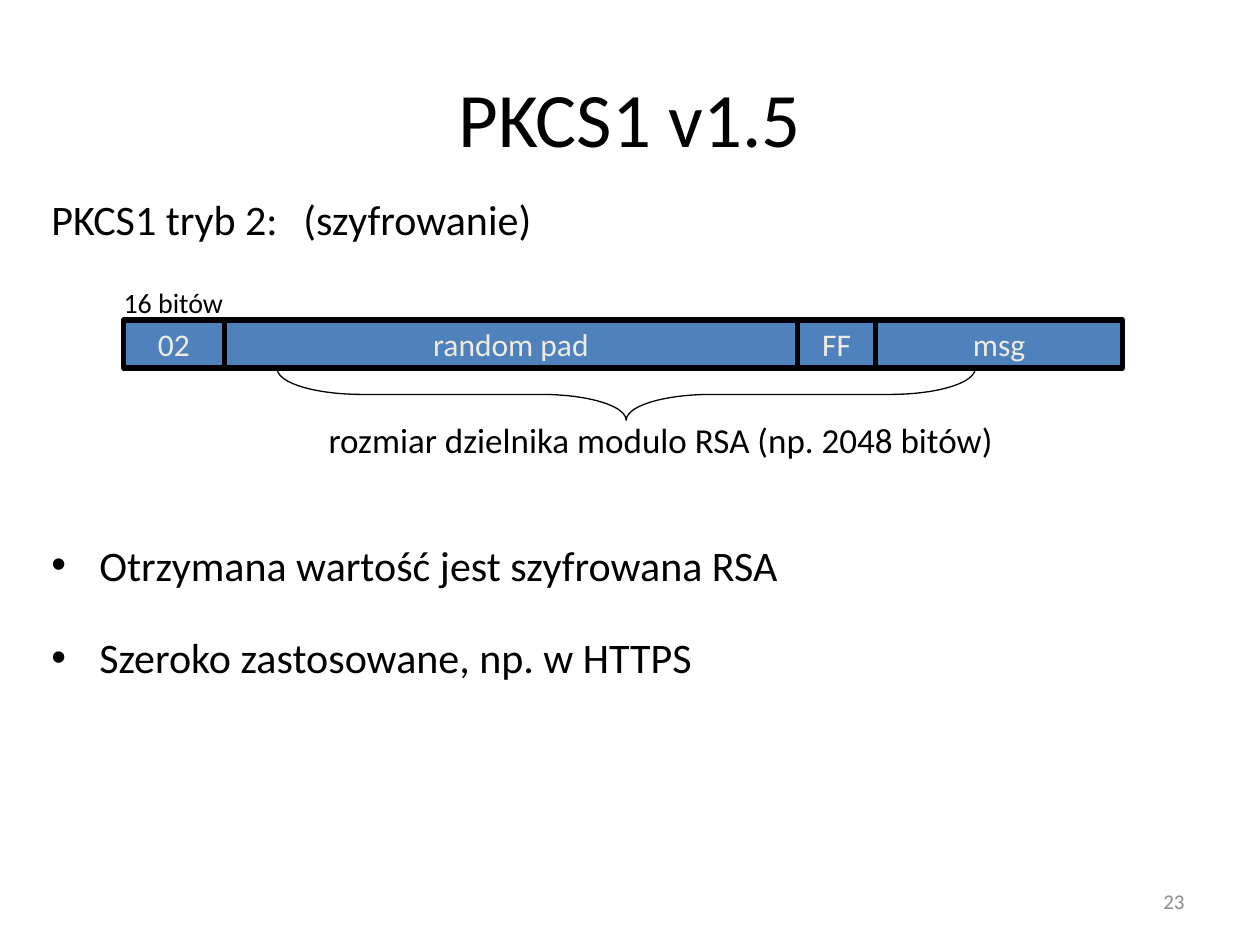
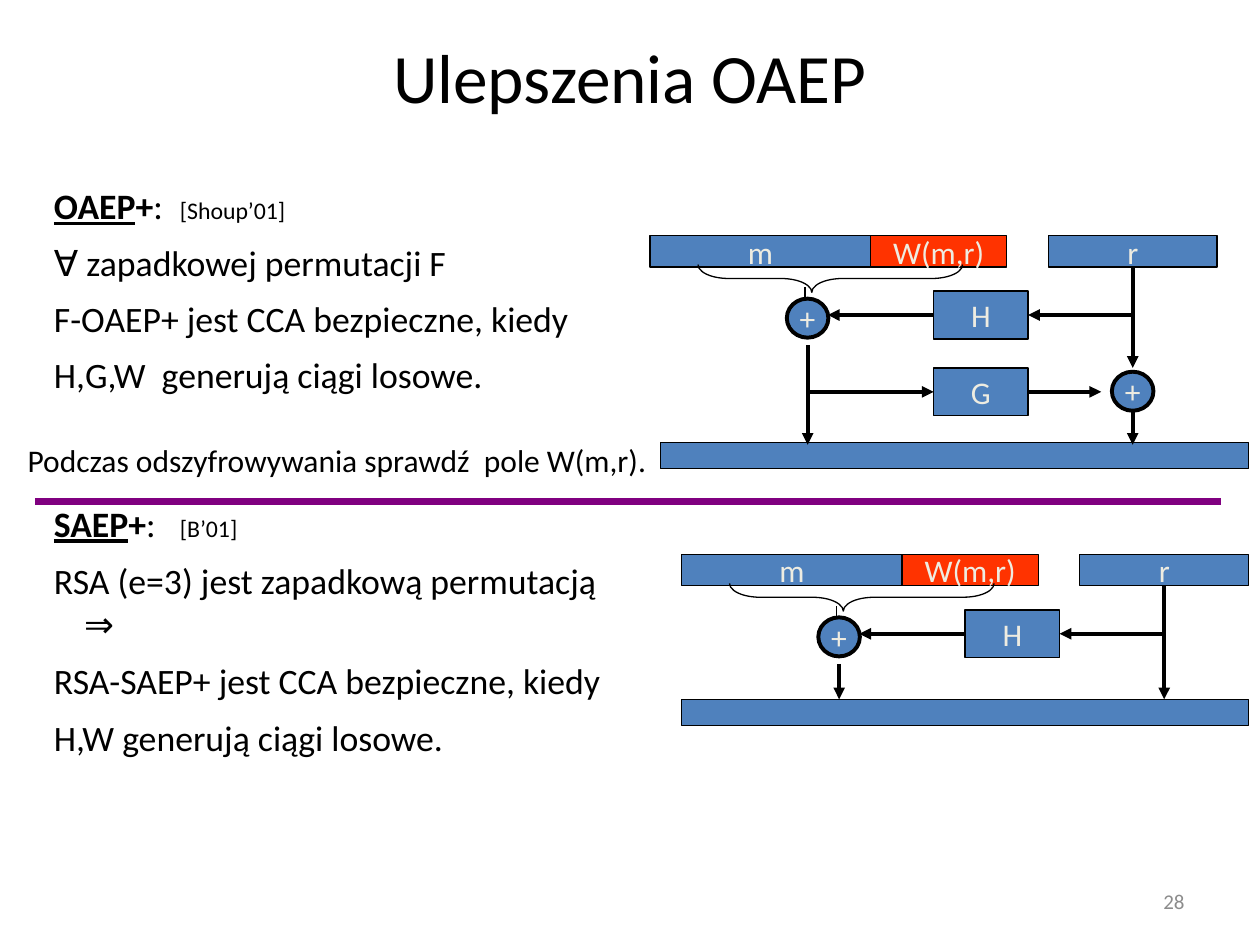
from pptx import Presentation
from pptx.dml.color import RGBColor
from pptx.enum.shapes import MSO_CONNECTOR, MSO_SHAPE
from pptx.enum.text import MSO_ANCHOR, PP_ALIGN
from pptx.oxml.ns import qn
from pptx.util import Inches, Pt
from lxml import etree

BLACK = RGBColor(0x00, 0x00, 0x00)
BLUE = RGBColor(0x4F, 0x81, 0xBD)
RED = RGBColor(0xFF, 0x33, 0x00)
CREAM = RGBColor(0xEE, 0xEC, 0xE1)
GREY = RGBColor(0x8C, 0x8C, 0x8C)
PURPLE = RGBColor(0x80, 0x00, 0x80)
FONT = "Calibri"

RECT, ELLIPSE, BRACE = MSO_SHAPE.RECTANGLE, MSO_SHAPE.OVAL, MSO_SHAPE.LEFT_BRACE
STRAIGHT = MSO_CONNECTOR.STRAIGHT
LEFT, CENTER, RIGHT = PP_ALIGN.LEFT, PP_ALIGN.CENTER, PP_ALIGN.RIGHT
MIDDLE, TOP = MSO_ANCHOR.MIDDLE, MSO_ANCHOR.TOP
SIDE_LEFT, SIDE_BOTTOM, SIDE_RIGHT = 1, 2, 3


def style(paragraph, size, color=BLACK, align=LEFT, before=0, spacing=1.0):
    """Set the font and spacing of a paragraph."""
    font = paragraph.font
    font.name, font.size, font.color.rgb = FONT, Pt(size), color
    paragraph.alignment = align
    paragraph.space_before = Pt(before)
    paragraph.line_spacing = spacing


def hang(paragraph, indent, bullet=None):
    """Give a paragraph a hanging indent and, if asked, a bullet."""
    properties = paragraph._p.get_or_add_pPr()
    properties.set("marL", str(Inches(indent)))
    properties.set("indent", str(-Inches(indent)))
    if bullet:
        etree.SubElement(properties, qn("a:buFont")).set("typeface", "Arial")
        etree.SubElement(properties, qn("a:buChar")).set("char", bullet)


def add_frame(slide, left, top, width, height, anchor=TOP, wrap=True):
    """Add an empty text box and return its text frame."""
    box = slide.shapes.add_textbox(Inches(left), Inches(top), Inches(width), Inches(height))
    box.text_frame.word_wrap = wrap
    box.text_frame.vertical_anchor = anchor
    return box.text_frame


def add_label(slide, text, box, size, color=BLACK, align=LEFT, anchor=TOP, wrap=True):
    """Add a text box holding one line."""
    paragraph = add_frame(slide, *box, anchor, wrap).paragraphs[0]
    paragraph.text = text
    style(paragraph, size, color, align)


def add_block(slide, text, left, top, width, height, kind=RECT, fill=BLUE, weight=0.75):
    """Add a filled, outlined shape with a centred caption."""
    block = slide.shapes.add_shape(kind, Inches(left), Inches(top), Inches(width), Inches(height))
    block.shadow.inherit = False
    block.fill.solid()
    block.fill.fore_color.rgb = fill
    block.line.color.rgb, block.line.width = BLACK, Pt(weight)
    if text:
        block.text_frame.word_wrap = False
        block.text_frame.vertical_anchor = MIDDLE
        caption = block.text_frame.paragraphs[0]
        caption.text = text
        style(caption, 18, CREAM, CENTER)
    return block


def add_brace(slide, center_x, center_y, span, depth, bend, tip):
    """Add a brace lying under a row, pointing down."""
    brace = slide.shapes.add_shape(BRACE, Inches(center_x - depth / 2), Inches(center_y - span / 2),
                                   Inches(depth), Inches(span))
    brace.rotation = 270
    brace.adjustments[0], brace.adjustments[1] = bend, tip
    brace.shadow.inherit = False
    brace.fill.background()
    brace.line.color.rgb, brace.line.width = BLACK, Pt(0.75)


def add_line(slide, start, end, color=BLACK, weight=0.75):
    """Add a straight line."""
    line = slide.shapes.add_connector(STRAIGHT, *map(Inches, (*start, *end)))
    line.line.color.rgb, line.line.width = color, Pt(weight)
    etree.SubElement(line._element.spPr, qn("a:effectLst"))
    return line


def add_arrow(slide, start, end, source=None, target=None):
    """Add an arrow, joined to (shape, side) pairs where given."""
    arrow = add_line(slide, start, end, weight=2.25)
    etree.SubElement(arrow.line._get_or_add_ln(), qn("a:tailEnd")).set("type", "triangle")
    if source:
        arrow.begin_connect(*source)
    if target:
        arrow.end_connect(*target)


def start_slide(deck, title, title_height, title_size, number):
    """Add a blank slide with its title and number."""
    slide = deck.slides.add_slide(deck.slide_layouts[6])
    add_label(slide, title, (0.5, 0.3, 9, title_height), title_size, align=CENTER, anchor=MIDDLE)
    add_label(slide, number, (7.17, 6.95, 2.33, 0.4), 12, GREY, RIGHT, MIDDLE)
    return slide


def add_message_format(slide, left, top):
    """Draw the row of PKCS1 fields with its size notes."""
    add_label(slide, "16 bitów", (left - 0.11, top - 0.32, 1.01, 0.37), 16, align=CENTER, wrap=False)
    field_left = left
    for name, width in (("02", 0.8), ("random pad", 4.55), ("FF", 0.62), ("msg", 1.96)):
        add_block(slide, name, field_left, top, width, 0.38, weight=3)
        field_left += width
    add_brace(slide, left + 3.99, top + 0.59, 5.54, 0.41, 1.64, 0.5)
    add_label(slide, "rozmiar dzielnika modulo RSA (np. 2048 bitów)",
              (left + 1.46, top + 0.73, 5.61, 0.44), 20, align=CENTER, wrap=False)


def add_pkcs_slide(deck):
    """Build the slide on PKCS1 padding."""
    slide = start_slide(deck, "PKCS1 v1.5", 1.25, 44, "23")
    add_label(slide, "PKCS1 tryb 2:\t(szyfrowanie)", (0.31, 1.49, 9.57, 0.5), 24)
    add_message_format(slide, 0.98, 2.54)
    facts = add_frame(slide, 0.31, 4.23, 9.57, 1.4)
    for index, text in enumerate(("Otrzymana wartość jest szyfrowana RSA",
                                  "Szeroko zastosowane, np. w HTTPS")):
        fact = facts.add_paragraph() if index else facts.paragraphs[0]
        fact.text = text
        style(fact, 24, before=24 if index else 0)
        hang(fact, 0.38, "•")


def add_claim(slide, top, scheme, citation, lines, heading_spacing, spacing, before):
    """Write a scheme's heading and the statement under it."""
    frame = add_frame(slide, 0.33, top, 4.57, 2.3)
    heading = frame.paragraphs[0]
    style(heading, 20.4, spacing=heading_spacing)
    for text, bold, underline, size in ((scheme, True, True, 20.4), ("+", True, False, 20.4),
                                        (":\t", False, False, 20.4), (citation, False, False, 13.6)):
        run = heading.add_run()
        run.text = text
        run.font.bold, run.font.underline, run.font.size = bold, underline, Pt(size)
    for text in lines:
        line = frame.add_paragraph()
        line.text = text
        style(line, 20.4, before=before, spacing=spacing)
        hang(line, 0.24)


def add_scheme(slide, left, top, output, with_g):
    """Draw a padding scheme; output is the result bar's left, top and width."""
    def at(x, y):
        return left + x, top + y

    output_left, output_top, output_width = output
    message_x, random_x = 1.25, 3.83
    arrow_end = output_top + (0.02 if with_g else 0)

    def add_sum(x, y):
        add_block(slide, "+", *at(x - 0.165, y), 0.33, 0.31, ELLIPSE, weight=2.25)

    add_block(slide, None, *at(output_left, output_top), output_width, 0.21)
    add_block(slide, "m", *at(0, 0), 1.75, 0.25)
    add_block(slide, "W(m,r)", *at(1.75, 0), 1.08, 0.25, fill=RED)
    random = add_block(slide, "r", *at(random_x - 0.67, 0), 1.34, 0.25)
    add_brace(slide, *at(1.43, 0.34), 2.1, 0.22, 1.11, 0.43)
    add_line(slide, at(1.23, 0.41), at(1.23, 0.49))

    hash_h = add_block(slide, "H", *at(2.25, 0.44), 0.75, 0.38)
    add_sum(message_x, 0.5)
    add_arrow(slide, at(random_x, 0.25), at(random_x, 1.05 if with_g else output_top),
              source=(random, SIDE_BOTTOM))
    add_arrow(slide, at(random_x, 0.63), at(3, 0.63), target=(hash_h, SIDE_RIGHT))
    add_arrow(slide, at(2.25, 0.63), at(1.41, 0.63), source=(hash_h, SIDE_LEFT))
    add_arrow(slide, at(message_x, 0.87), at(message_x, arrow_end))

    if with_g:
        hash_g = add_block(slide, "G", *at(2.25, 1.05), 0.75, 0.38)
        add_sum(random_x, 1.08)
        add_arrow(slide, at(message_x, 1.24), at(2.25, 1.24), target=(hash_g, SIDE_LEFT))
        add_arrow(slide, at(3, 1.24), at(3.58, 1.24), source=(hash_g, SIDE_RIGHT))
        add_arrow(slide, at(random_x, 1.39), at(random_x, arrow_end))


def add_oaep_slide(deck):
    """Build the slide comparing OAEP+ and SAEP+."""
    slide = start_slide(deck, "Ulepszenia OAEP", 0.61, 39.6, "28")
    add_claim(slide, 1.45, "OAEP", "[Shoup’01]",
              ("∀ zapadkowej permutacji F", "F-OAEP+ jest CCA bezpieczne, kiedy",
               "H,G,W  generują ciągi losowe."), 0.9, 0.9, 10.2)
    add_claim(slide, 4.0, "SAEP", "[B’01]",
              ("RSA (e=3) jest zapadkową permutacją ⇒", "RSA-SAEP+ jest CCA bezpieczne, kiedy",
               "H,W generują ciągi losowe."), 0.8, 1.0, 8.16)
    add_scheme(slide, 5.16, 1.87, (0.08, 1.64, 4.67), with_g=True)
    add_scheme(slide, 5.41, 4.4, (0, 1.15, 4.5), with_g=False)
    add_line(slide, (0.28, 3.98), (9.69, 3.98), PURPLE, 4.5)
    add_label(slide, "Podczas odszyfrowywania sprawdź  pole W(m,r).", (0.12, 3.45, 5.39, 0.4), 18)


def main():
    """Build and save the deck."""
    deck = Presentation()
    deck.slide_width, deck.slide_height = Inches(10), Inches(7.5)
    add_pkcs_slide(deck)
    add_oaep_slide(deck)
    deck.save("out.pptx")


if __name__ == "__main__":
    main()
